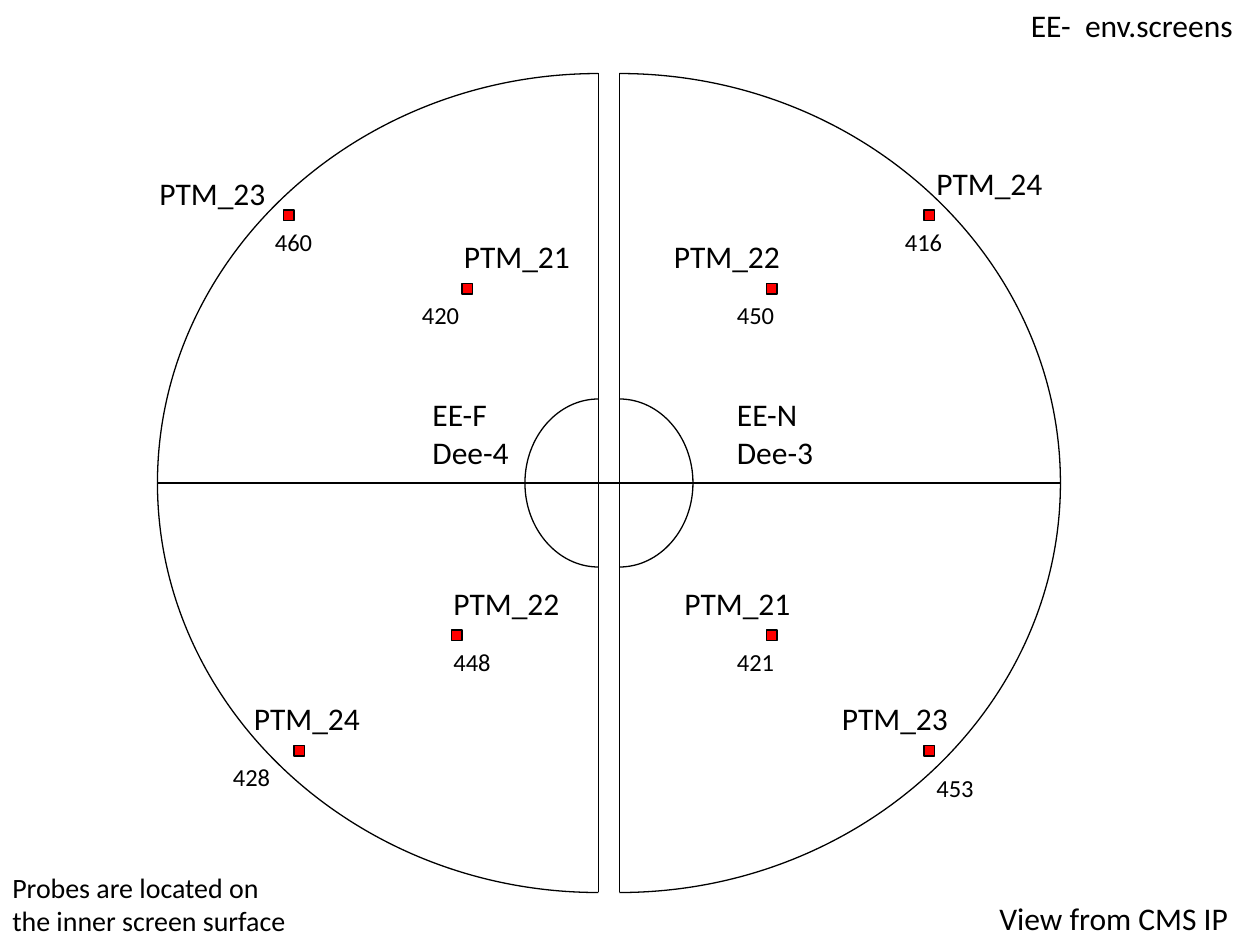
from lxml.etree import SubElement
from pptx import Presentation
from pptx.dml.color import RGBColor
from pptx.enum.shapes import MSO_CONNECTOR, MSO_SHAPE
from pptx.enum.text import MSO_AUTO_SIZE
from pptx.oxml.ns import qn
from pptx.util import Inches, Pt

BLACK, RED = "000000", "FF0000"
FONT = "Calibri"
BEND = 0.55                     # handle length of a round quarter curve

# Places are counted in grid steps of a twelfth of an inch.
MID = 46                        # height of the horizontal axis
RINGS = [(42, 39), (7, 8)]      # radii across and down
HALVES = [(59, 1), (57, -1)]    # flat edge, direction of the bulge
AXES = [(101, 49), (15, 67)]
SIDE = 1

# probe name and its place, reading and its place, marker place
PROBES = [
    ("PTM_22", (63, 22), "450", (69, 28), (73, 27)),
    ("PTM_24", (88, 15), "416", (85, 21), (88, 20)),
    ("PTM_21", (64, 55), "421", (69, 61), (73, 60)),
    ("PTM_23", (79, 66), "453", (88, 73), (88, 71)),
    ("PTM_21", (43, 22), "420", (39, 28), (44, 27)),
    ("PTM_23", (14, 16), "460", (25, 21), (27, 20)),
    ("PTM_22", (42, 55), "448", (42, 61), (43, 60)),
    ("PTM_24", (23, 66), "428", (21, 72), (28, 71)),
]
# lines, place, width and height in inches, size
NOTES = [
    (["EE-N", "Dee-3"], (69, 37), 0.82, 0.71, 18),
    (["EE-F", "Dee-4"], (40, 37), 0.82, 0.71, 18),
    (["View from CMS IP"], (94, 85), 2.04, 0.4, 18),
    (["EE-  env.screens"], (97, 0), 1.83, 0.4, 18),
    (["Probes are located on", "the inner screen surface"],
     (0, 82.3), 2.4, 0.64, 16),
]


def grid(*steps):
    return [Inches(n / 12) for n in steps]


def color(code):
    return RGBColor.from_string(code)


def ink(line):
    line.color.rgb = color(BLACK)
    line.width = Pt(0.75)


def rule(shapes, *ends):
    line = shapes.add_connector(MSO_CONNECTOR.STRAIGHT, *grid(*ends))
    ink(line.line)
    SubElement(line._element.spPr, qn("a:effectLst"))


def curve(shape):
    """Turn the single straight segment of a freeform into a quarter ellipse."""
    outline = shape._element.spPr.find(".//" + qn("a:path"))
    line = outline.find(qn("a:lnTo"))
    (x1, y1), (x2, y2) = [(int(p.get("x")), int(p.get("y")))
                          for p in outline.iter(qn("a:pt"))]
    outline.remove(line)
    bow = SubElement(outline, qn("a:cubicBezTo"))
    for x, y in [(x1 + BEND * (x2 - x1), y1),
                 (x2, y2 + BEND * (y1 - y2)), (x2, y2)]:
        SubElement(bow, qn("a:pt"), x=str(round(x)), y=str(round(y)))


def quarter(shapes, edge, way, rx, ry, turn):
    """Draw a quarter ellipse from the flat edge to the horizontal axis."""
    pen = shapes.build_freeform(*grid(edge, MID + turn * ry))
    pen.add_line_segments([grid(edge + way * rx, MID)], close=False)
    arc = pen.convert_to_shape()
    curve(arc)
    arc.shadow.inherit = False
    arc.fill.background()
    ink(arc.line)


def half(shapes, edge, way):
    group = shapes.add_group_shape().shapes
    for rx, ry in RINGS:
        for turn in (-1, 1):
            quarter(group, edge, way, rx, ry, turn)
    tall = RINGS[0][1]
    rule(group, edge, MID - tall, edge, MID + tall)


def marker(shapes, x, y):
    box = shapes.add_shape(MSO_SHAPE.RECTANGLE, *grid(x, y, SIDE, SIDE))
    box.shadow.inherit = False
    box.fill.solid()
    box.fill.fore_color.rgb = color(RED)
    ink(box.line)


def label(shapes, lines, place, width, height, size):
    frame = shapes.add_textbox(*grid(*place), Inches(width),
                               Inches(height)).text_frame
    frame.word_wrap = False
    frame.auto_size = MSO_AUTO_SIZE.SHAPE_TO_FIT_TEXT
    frame.text = "\n".join(lines)
    for para in frame.paragraphs:
        para.font.name = FONT
        para.font.size = Pt(size)
        para.font.color.rgb = color(BLACK)


def main():
    deck = Presentation()
    deck.slide_width, deck.slide_height = Inches(10), Inches(7.5)
    shapes = deck.slides.add_slide(deck.slide_layouts[6]).shapes
    for start, end in AXES:
        rule(shapes, start, MID, end, MID)
    for edge, way in HALVES:
        half(shapes, edge, way)
    for name, spot, value, below, mark in PROBES:
        marker(shapes, *mark)
        label(shapes, [name], spot, 1.05, 0.4, 18)
        label(shapes, [value], below, 0.5, 0.34, 14)
    for note in NOTES:
        label(shapes, *note)
    deck.save("out.pptx")


if __name__ == "__main__":
    main()
